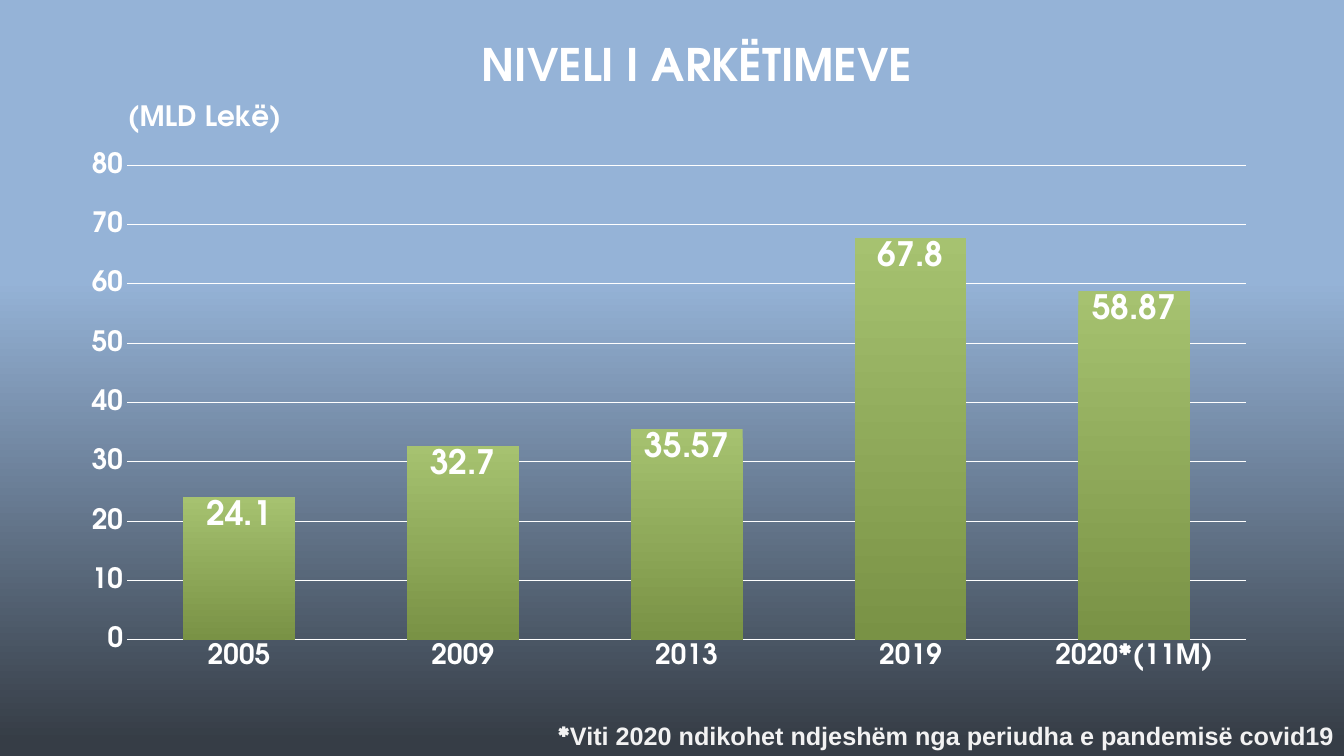
import pptx
import pptx.chart.data
import pptx.dml.color
import pptx.enum.chart
import pptx.enum.text
import pptx.oxml
import pptx.oxml.ns
import pptx.util
from dataclasses import dataclass

Pt = pptx.util.Pt
qn = pptx.oxml.ns.qn
Align = pptx.enum.text.PP_ALIGN
Anchor = pptx.enum.text.MSO_ANCHOR
enum = pptx.enum.chart


@dataclass(frozen=True)
class Theme:
    white: str = "FFFFFF"
    pale: str = "F2F2F2"
    sky: tuple = ((0.37, "95B3D7"), (0.98, "363D46"))
    bar: tuple = ((0, "A6C270"), (1, "799245"))
    face: str = "TeX Gyre Adventor"
    plain: str = "Arial"
    head: int = 32
    label: int = 24
    axis: int = 20
    note: int = 18


theme = Theme()


def rgb(code):
    return pptx.dml.color.RGBColor.from_string(code)


def style(font, size, color=theme.white, face=theme.face):
    font.size, font.bold, font.name = Pt(size), True, face
    font.color.rgb = rgb(color)


def fade(fill, stops):
    """Fill from top to bottom between two stops."""
    fill.gradient()
    fill.gradient_angle = 270
    for stop, (place, color) in zip(fill.gradient_stops, stops):
        stop.position = place
        stop.color.rgb = rgb(color)


def shade(run):
    """Drop a soft shadow behind the letters."""
    glow = pptx.oxml.parse_xml(
        f'<a:effectLst {pptx.oxml.ns.nsdecls("a")}>'
        '<a:outerShdw blurRad="38100" dist="38100" dir="2700000" algn="tl">'
        '<a:srgbClr val="000000"><a:alpha val="43000"/></a:srgbClr>'
        '</a:outerShdw></a:effectLst>')
    run.font._element.find(qn("a:solidFill")).addnext(glow)


def write(slide, box, parts, size, color=theme.white, align=Align.LEFT,
          anchor=Anchor.TOP, shadow=False):
    """Add one line of text made of (text, face) parts."""
    frame = slide.shapes.add_textbox(*map(Pt, box)).text_frame
    frame.word_wrap = True
    frame.vertical_anchor = anchor
    line = frame.paragraphs[0]
    line.alignment = align
    for text, face in parts:
        run = line.add_run()
        run.text = text
        style(run.font, size, color, face)
        if shadow:
            shade(run)


def fix(parent, index, inner=False, **sides):
    """Give a chart part a manual layout, in shares of the chart."""
    for old in parent.findall(qn("c:layout")):
        parent.remove(old)
    target = '<c:layoutTarget val="inner"/>' if inner else ""
    modes = "".join(f'<c:{key}Mode val="edge"/>' for key in "xy")
    values = "".join(f'<c:{key} val="{val}"/>' for key, val in sides.items())
    parent.insert(index, pptx.oxml.parse_xml(
        f'<c:layout {pptx.oxml.ns.nsdecls("c")}><c:manualLayout>'
        f'{target}{modes}{values}</c:manualLayout></c:layout>'))


def axes(chart):
    for axis in (chart.category_axis, chart.value_axis):
        axis.major_tick_mark = axis.minor_tick_mark = enum.XL_TICK_MARK.NONE
        style(axis.tick_labels.font, theme.axis)
    base = chart.category_axis.format.line
    base.width = Pt(1)
    base.color.rgb = rgb(theme.white)
    scale = chart.value_axis
    scale.minimum_scale, scale.maximum_scale, scale.major_unit = 0, 80, 10
    scale.format.line.fill.background()
    grid = scale.major_gridlines.format.line
    grid.width = Pt(0.75)
    grid.color.rgb = rgb(theme.white)


def bars(slide, box):
    data = pptx.chart.data.CategoryChartData()
    data.categories = ["2005", "2009", "2013", "2019", "2020*(11M)"]
    data.add_series("Series 1", (24.1, 32.7, 35.57, 67.8, 58.87))
    chart = slide.shapes.add_chart(
        enum.XL_CHART_TYPE.COLUMN_CLUSTERED, *map(Pt, box), data).chart
    chart.has_legend = False
    chart.font.name, chart.font.size = theme.face, Pt(10)
    chart.font.color.rgb = rgb(theme.white)
    axes(chart)

    chart.has_title = True
    unit = chart.chart_title.text_frame.paragraphs[0].add_run()
    unit.text = "(MLD Lekë)"
    style(unit.font, theme.axis)
    fix(chart.chart_title._element, 1, x=0.02, y=0.01)

    plot = chart.plots[0]
    plot.vary_by_categories = False
    plot.gap_width, plot.overlap = 100, -24
    area = chart._chartSpace.chart.plotArea
    fix(area, 0, inner=True, x=0.024, y=0.121, w=0.966, h=0.773)
    fade(plot.series[0].format.fill, theme.bar)
    plot.has_data_labels = True
    labels = plot.data_labels
    labels.show_value = True
    labels.position = enum.XL_LABEL_POSITION.INSIDE_END
    style(labels.font, theme.label)


def build(slide, wide, high):
    fade(slide.background.fill, theme.sky)
    write(slide, (337, -29.5, 484.5, 150), [("NIVELI I ARKËTIMEVE", theme.face)],
          theme.head, anchor=Anchor.MIDDLE, shadow=True)
    bars(slide, (65.5, 65, 833, 438.5))
    note = "Viti 2020 ndikohet ndjeshëm nga periudha e pandemisë covid19"
    write(slide, (wide - 721.5, high - 29, 721.5, 29),
          [("*", theme.face), (note, theme.plain)],
          theme.note, theme.pale, Align.RIGHT)


def main():
    deck = pptx.Presentation()
    wide, high = 960, 540
    deck.slide_width, deck.slide_height = Pt(wide), Pt(high)
    build(deck.slides.add_slide(deck.slide_layouts[6]), wide, high)
    deck.save("out.pptx")


if __name__ == "__main__":
    main()
